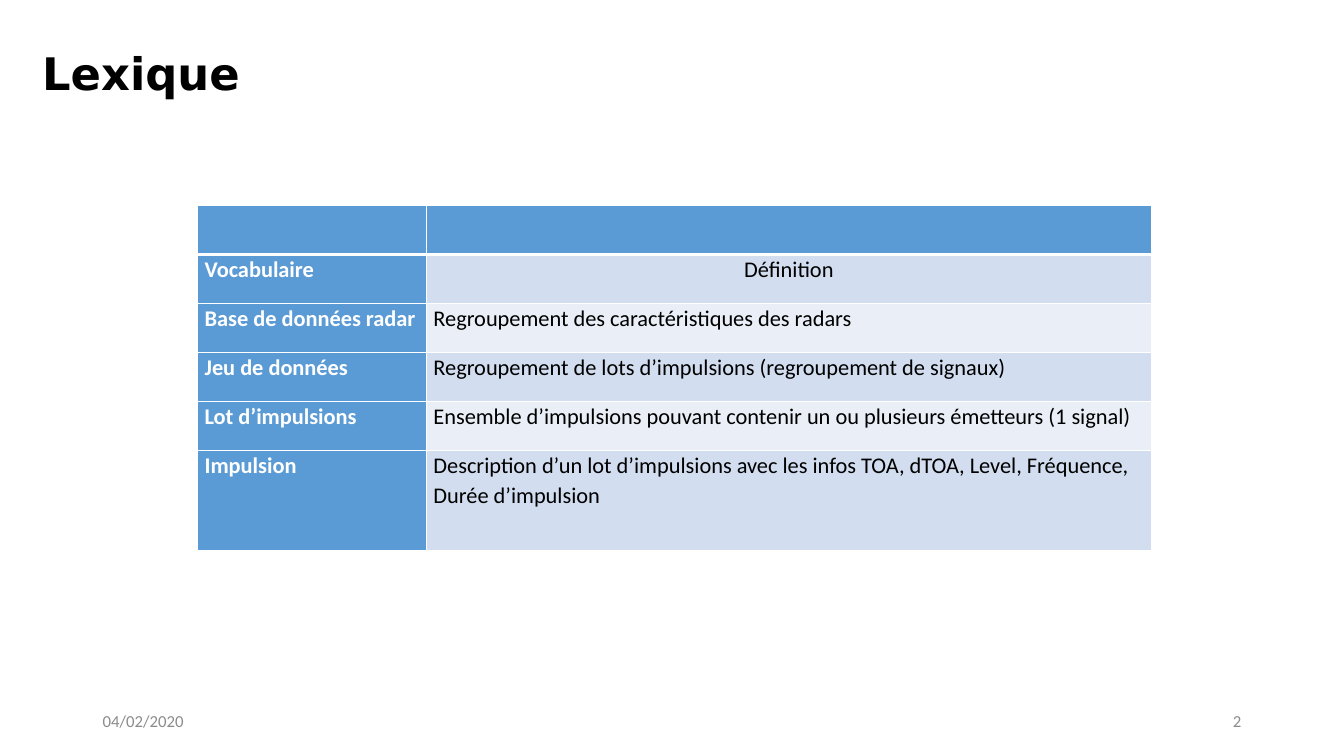
from lxml import etree
from pptx import Presentation
from pptx.dml.color import RGBColor
from pptx.enum.text import MSO_ANCHOR, PP_ALIGN
from pptx.oxml.ns import qn
from pptx.util import Inches, Pt

LEFT, CENTER, RIGHT = PP_ALIGN.LEFT, PP_ALIGN.CENTER, PP_ALIGN.RIGHT
TOP, MIDDLE = MSO_ANCHOR.TOP, MSO_ANCHOR.MIDDLE

BLUE, BAND_DARK, BAND_LIGHT = "5B9BD5", "D2DEEF", "EAEFF7"
WHITE, BLACK, GRAY = "FFFFFF", "000000", "8C8C8C"

ENTRIES = [
    ("Vocabulaire", "Définition"),
    ("Base de données radar", "Regroupement des caractéristiques des radars"),
    ("Jeu de données", "Regroupement de lots d’impulsions (regroupement de signaux)"),
    ("Lot d’impulsions",
     "Ensemble d’impulsions pouvant contenir un ou plusieurs émetteurs (1 signal)"),
    ("Impulsion",
     "Description d’un lot d’impulsions avec les infos TOA, dTOA, Level, Fréquence, "
     "Durée d’impulsion"),
]


def rgb(color):
    """Turn a hex string into a colour."""
    return RGBColor.from_string(color)


def write(tf, text, size=16, color=BLACK, bold=False, font="Calibri", align=LEFT, spacing=None):
    """Write one formatted paragraph into a text frame."""
    tf.word_wrap = True
    p = tf.paragraphs[0]
    p.alignment = align
    p.line_spacing = spacing
    r = p.add_run()
    r.text = text
    r.font.size = Pt(size)
    r.font.name = font
    r.font.bold = bold
    r.font.color.rgb = rgb(color)


def add_text(s, box, text, anchor=TOP, **style):
    """Add a text box at the given left, top, width and height."""
    tf = s.shapes.add_textbox(*map(Inches, box)).text_frame
    tf.vertical_anchor = anchor
    write(tf, text, **style)


def set_borders(cell, **widths):
    """Draw white cell borders, 1 pt unless a side is given another width."""
    tc_pr = cell._tc.get_or_add_tcPr()
    for side in "LRTB":
        ln = etree.SubElement(tc_pr, qn("a:ln" + side), w=str(Pt(widths.get(side, 1))))
        fill = etree.SubElement(ln, qn("a:solidFill"))
        etree.SubElement(fill, qn("a:srgbClr"), val=WHITE)


def style_cell(cell, color, **borders):
    """Give a cell its borders and fill."""
    set_borders(cell, **borders)
    cell.fill.solid()
    cell.fill.fore_color.rgb = rgb(color)


def add_lexicon(s, box, term_width=2.27, last_height=0.99):
    """Add the table of terms and definitions under an empty header row."""
    left, top, width, height = box
    table = s.shapes.add_table(len(ENTRIES) + 1, 2, *map(Inches, box)).table
    table.columns[0].width = Inches(term_width)
    table.columns[1].width = Inches(width - term_width)
    for row in table.rows:
        row.height = Inches((height - last_height) / len(ENTRIES))
    table.rows[len(ENTRIES)].height = Inches(last_height)

    for col in range(2):
        style_cell(table.cell(0, col), BLUE, B=3)
    for i, entry in enumerate(ENTRIES, 1):
        band = BAND_DARK if i % 2 else BAND_LIGHT
        for col, text in enumerate(entry):
            cell = table.cell(i, col)
            is_term = col == 0
            style_cell(cell, BLUE if is_term else band, T=3 if i == 1 else 1)
            cell.margin_left = cell.margin_right = Inches(0.07)
            cell.margin_top = cell.margin_bottom = 0
            write(cell.text_frame, text, color=WHITE if is_term else BLACK, bold=is_term,
                  align=CENTER if i == 1 and not is_term else LEFT, spacing=1.07)


def add_footer(s, box, date, number, field_width=3):
    """Add the date at the left end and the slide number at the right end."""
    left, top, width, height = box
    add_text(s, (left, top, field_width, height), date, MIDDLE, size=12, color=GRAY)
    add_text(s, (left + width - field_width, top, field_width, height), number, MIDDLE,
             size=12, color=GRAY, align=RIGHT)


def main():
    """Build the lexicon slide."""
    prs = Presentation()
    prs.slide_width, prs.slide_height = Inches(13.33), Inches(7.5)
    s = prs.slides.add_slide(prs.slide_layouts[6])
    add_text(s, (0.32, 0.4, 12.75, 0.85), "Lexique", size=32, bold=True, font="DejaVu Sans")
    add_lexicon(s, (1.96, 2.04, 9.46, 3.42))
    add_footer(s, (0.92, 6.95, 11.49, 0.4), "04/02/2020", "2")
    prs.save("out.pptx")


if __name__ == "__main__":
    main()
